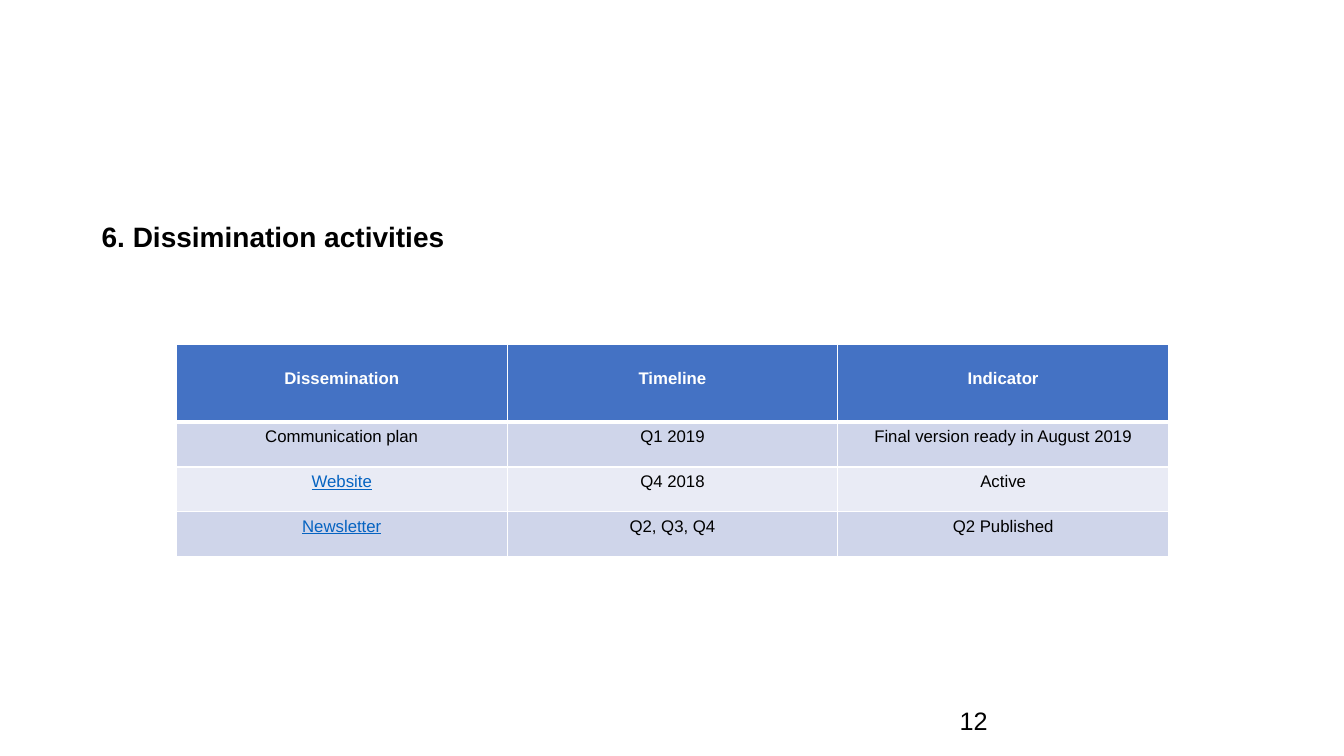
from dataclasses import dataclass

from lxml.etree import SubElement as Sub
from pptx import Presentation
from pptx.dml.color import RGBColor as Rgb
from pptx.enum.text import MSO_ANCHOR as Anchor, PP_ALIGN as Align
from pptx.oxml.ns import qn
from pptx.util import Inches, Pt


@dataclass(frozen=True)
class Theme:
    font: str = "Arial"
    black: str = "000000"
    white: str = "FFFFFF"
    blue: str = "4472C4"
    link: str = "0563C1"
    bands: tuple[str, str] = ("CFD5EA", "E9EBF5")
    title: int = 20
    number: int = 18
    table: int = 12
    thin: int = 1
    thick: int = 3


@dataclass(frozen=True)
class Label:
    text: str
    box: tuple[float, float, float, float]
    size: int
    anchor: Anchor
    bold: bool = False
    lead: float = 1.0


THEME = Theme()
LABELS = [
    Label("12", (9.42, 6.95, 3, 0.4), THEME.number, Anchor.MIDDLE),
    Label("6. Dissimination activities", (0.91, 2.17, 10.26, 0.43),
          THEME.title, Anchor.TOP, True, 0.9),
]
ROWS = [
    ("Dissemination", "Timeline", "Indicator"),
    ("Communication plan", "Q1 2019", "Final version ready in August 2019"),
    ("Website", "Q4 2018", "Active"),
    ("Newsletter", "Q2, Q3, Q4", "Q2 Published"),
]
LINKS = {"Website", "Newsletter"}
LEFT, TOP, WIDTH, HEIGHT = 1.75, 3.42, 9.84, 2.1
HEAD = 0.77


def style(para, text: str, color: str, form: dict) -> None:
    run = para.add_run()
    run.text = text
    for name, value in ({"name": THEME.font} | form).items():
        setattr(run.font, name, value)
    run.font.color.rgb = Rgb.from_string(color)


def draw_label(slide, label: Label) -> None:
    frame = slide.shapes.add_textbox(*map(Inches, label.box)).text_frame
    frame.word_wrap = True
    frame.vertical_anchor = label.anchor
    para = frame.paragraphs[0]
    para.line_spacing = label.lead
    style(para, label.text, THEME.black,
          {"size": Pt(label.size), "bold": label.bold})


def draw_edges(cell, row: int) -> None:
    props = cell._tc.get_or_add_tcPr()
    # The heavy rule lies between the header and the first row
    heavy = {(0, "lnB"), (1, "lnT")}
    for side in ("lnL", "lnR", "lnT", "lnB"):
        width = THEME.thick if (row, side) in heavy else THEME.thin
        line = Sub(props, qn(f"a:{side}"), w=str(Pt(width)))
        fill = Sub(line, qn("a:solidFill"))
        Sub(fill, qn("a:srgbClr"), val=THEME.white)


def draw_cell(cell, text: str, row: int) -> None:
    head, link = row == 0, text in LINKS
    draw_edges(cell, row)
    back = THEME.blue if head else THEME.bands[(row - 1) % 2]
    cell.fill.solid()
    cell.fill.fore_color.rgb = Rgb.from_string(back)
    if head:
        cell.margin_top = Inches(0.24)
    para = cell.text_frame.paragraphs[0]
    para.alignment = Align.CENTER
    color = THEME.white if head else THEME.link if link else THEME.black
    style(para, text, color,
          {"size": Pt(THEME.table), "bold": head, "underline": link})


def draw_table(slide) -> None:
    count = len(ROWS[0])
    box = map(Inches, (LEFT, TOP, WIDTH, HEIGHT))
    table = slide.shapes.add_table(len(ROWS), count, *box).table
    for col in table.columns:
        col.width = Inches(WIDTH / count)
    for row, texts in enumerate(ROWS):
        high = HEAD if row == 0 else (HEIGHT - HEAD) / (len(ROWS) - 1)
        table.rows[row].height = Inches(high)
        for col, text in enumerate(texts):
            draw_cell(table.cell(row, col), text, row)


def main() -> None:
    deck = Presentation()
    deck.slide_width, deck.slide_height = Inches(13.33), Inches(7.5)
    slide = deck.slides.add_slide(deck.slide_layouts[6])
    # Page number and title
    for label in LABELS:
        draw_label(slide, label)
    # Plan of activities
    draw_table(slide)
    deck.save("out.pptx")


if __name__ == "__main__":
    main()
